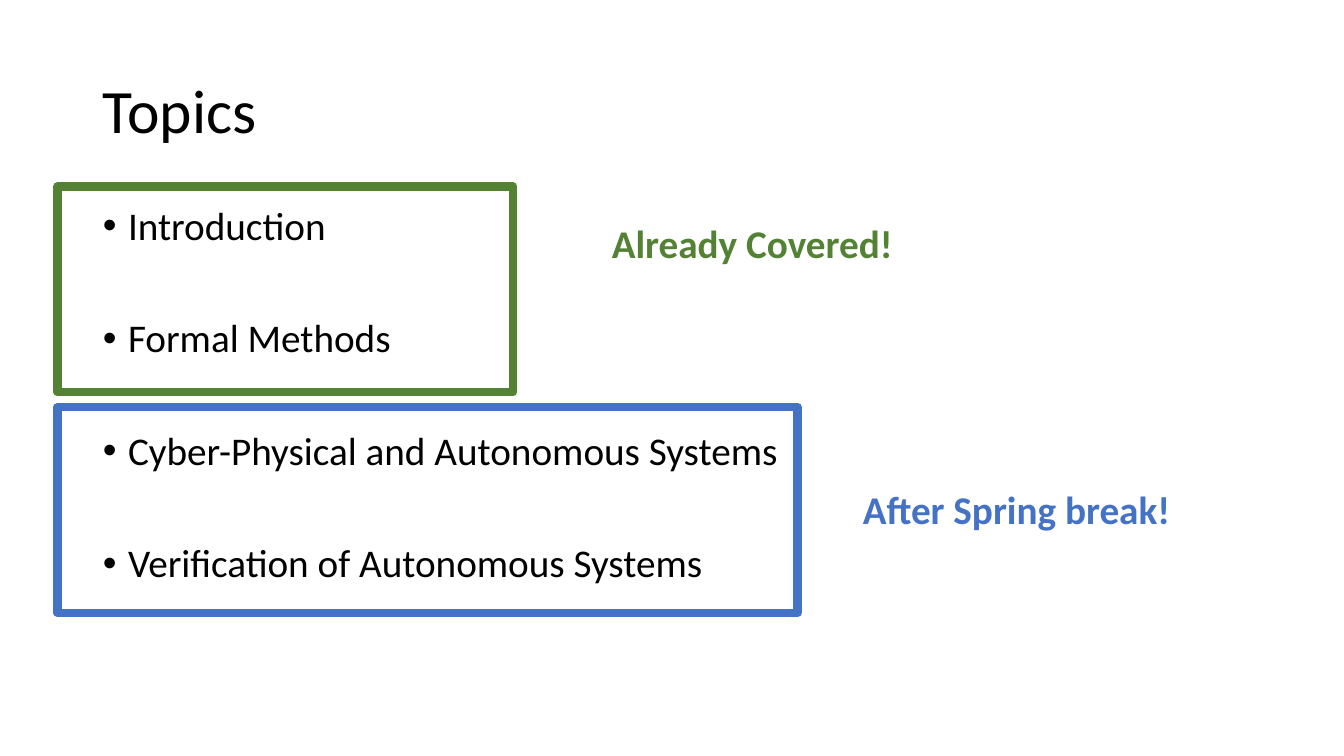
from pptx import Presentation
from pptx.dml.color import RGBColor
from pptx.enum.shapes import MSO_SHAPE
from pptx.enum.text import MSO_ANCHOR, MSO_AUTO_SIZE, PP_ALIGN
from pptx.util import Inches, Pt

BLACK = RGBColor(0x00, 0x00, 0x00)
GREEN = RGBColor(0x54, 0x82, 0x35)
BLUE = RGBColor(0x44, 0x72, 0xC4)
FONT = "Calibri"
TOPICS = [
    "Introduction",
    "Formal Methods",
    "Cyber-Physical and Autonomous Systems",
    "Verification of Autonomous Systems",
]


def place(part, left, top, width, height):
    part.left, part.top = Inches(left), Inches(top)
    part.width, part.height = Inches(width), Inches(height)


def add_text(paragraph, text, size, color, bold=False):
    run = paragraph.add_run()
    run.text = text
    run.font.name = FONT
    run.font.size = Pt(size)
    run.font.bold = bold
    run.font.color.rgb = color


def fill_heading(heading, text, box):
    place(heading, *box)
    frame = heading.text_frame
    frame.auto_size = MSO_AUTO_SIZE.NONE
    frame.vertical_anchor = MSO_ANCHOR.MIDDLE
    line = frame.paragraphs[0]
    line.alignment = PP_ALIGN.LEFT
    line.line_spacing = 0.9
    add_text(line, text, 44, BLACK)


def fill_topics(topic_list, topics, box):
    place(topic_list, *box)
    frame = topic_list.text_frame
    frame.auto_size = MSO_AUTO_SIZE.NONE
    for index, topic in enumerate(topics):
        line = frame.add_paragraph() if index else frame.paragraphs[0]
        line.line_spacing = 0.9
        line.space_before = Pt(50 if index else 0)
        properties = line._p.get_or_add_pPr()
        properties.set("marL", str(Inches(0.25)))
        properties.set("indent", str(Inches(-0.25)))
        add_text(line, topic, 28, BLACK)


def add_stage(slide, text, color, box, gap, drop):
    left, top, width, height = box
    border = slide.shapes.add_shape(
        MSO_SHAPE.RECTANGLE, *(Inches(length) for length in box))
    border.shadow.inherit = False
    border.fill.background()
    border.line.color.rgb = color
    border.line.width = Pt(6)

    label = slide.shapes.add_textbox(
        Inches(left + width + gap), Inches(top + drop), Inches(3.41), Inches(0.57))
    label.text_frame.word_wrap = True
    label.text_frame.auto_size = MSO_AUTO_SIZE.SHAPE_TO_FIT_TEXT
    add_text(label.text_frame.paragraphs[0], text, 28, color, bold=True)


def build_topics_slide(presentation):
    slide = presentation.slides.add_slide(presentation.slide_layouts[1])
    fill_heading(slide.shapes.title, "Topics", (0.92, 0.4, 11.5, 1.45))
    fill_topics(slide.placeholders[1], TOPICS, (0.92, 2, 11.5, 4.76))
    add_stage(slide, "Already Covered!", GREEN, (0.57, 1.85, 4.52, 2.04), 0.88, 0.28)
    add_stage(slide, "After Spring break!", BLUE, (0.57, 4.04, 7.34, 2.04), 0.55, 0.73)


def main():
    presentation = Presentation()
    presentation.slide_width = Inches(13.33)
    presentation.slide_height = Inches(7.5)
    build_topics_slide(presentation)
    presentation.save("out.pptx")


if __name__ == "__main__":
    main()
